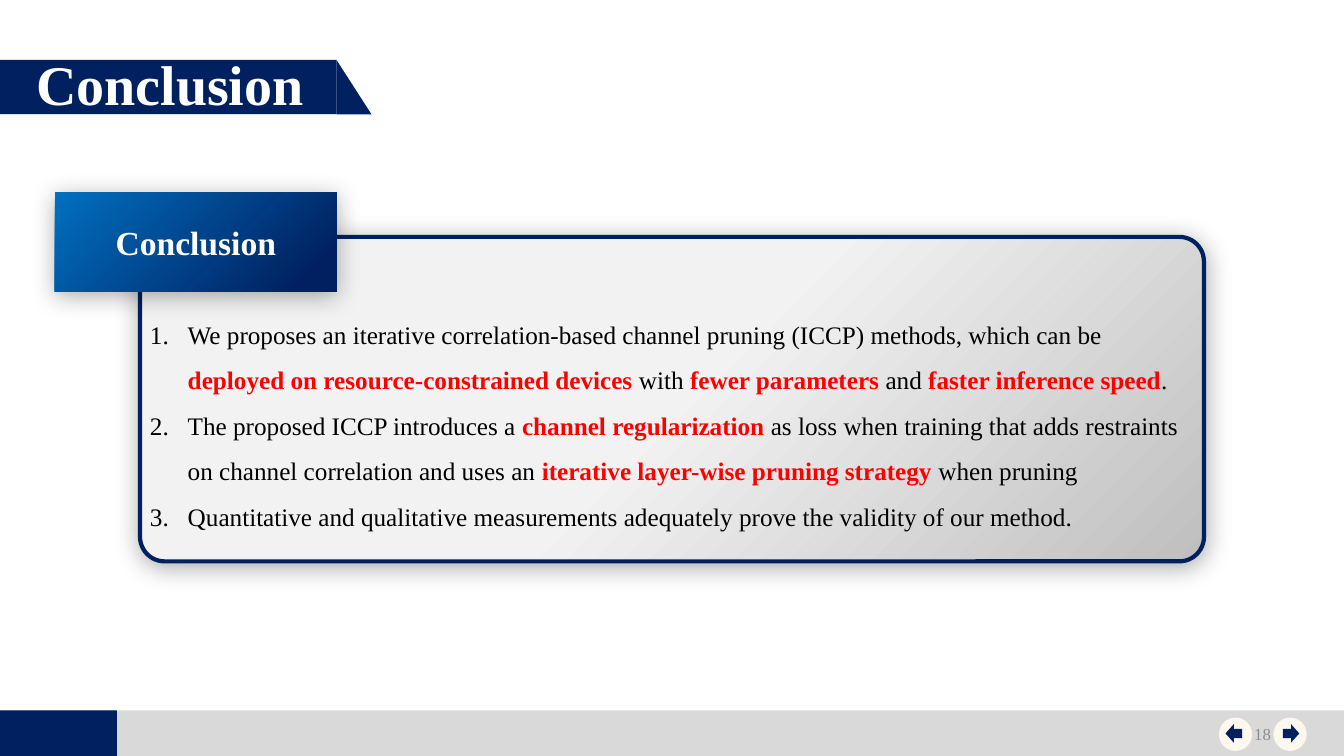
from dataclasses import dataclass

from lxml import etree
from pptx import Presentation
from pptx.dml.color import RGBColor
from pptx.enum import shapes, text
from pptx.oxml import ns
from pptx.util import Pt


@dataclass(frozen=True)
class Theme:
    font: str = "Times New Roman"
    navy: str = "002060"
    blue: str = "0070C0"
    cream: str = "FCF8ED"
    bar: str = "D9D9D9"
    panel_light: str = "F2F2F2"
    panel_dark: str = "BFBFBF"
    number: str = "8C8C8C"
    white: str = "FFFFFF"
    black: str = "000000"
    red: str = "FF0000"
    title_size: int = 40
    label_size: int = 24
    body_size: int = 18
    number_size: int = 12


T = Theme()
SHAPE = shapes.MSO_SHAPE
ALIGN = text.PP_ALIGN
ANCHOR = text.MSO_ANCHOR

# Each point is a list of (text, highlighted) pieces
POINTS = [
    [("We proposes an iterative correlation-based channel pruning (ICCP) "
      "methods, which can be ", False),
     ("deployed on resource-constrained devices", True),
     (" with ", False),
     ("fewer parameters ", True),
     ("and ", False),
     ("faster inference speed", True),
     (".", False)],
    [("The proposed ICCP introduces a ", False),
     ("channel regularization ", True),
     ("as loss when training that adds restraints on channel correlation "
      "and uses an ", False),
     ("iterative layer-wise pruning strategy ", True),
     ("when pruning", False)],
    [("Quantitative and qualitative measurements adequately prove the "
      "validity of our method.", False)],
]


def rgb(color):
    return RGBColor.from_string(color)


def add_shape(s, kind, box, color=None):
    sp = s.shapes.add_shape(kind, *map(Pt, box))
    sp.shadow.inherit = False
    sp.line.fill.background()
    if color:
        sp.fill.solid()
        sp.fill.fore_color.rgb = rgb(color)
    return sp


def set_gradient(sp, stops):
    """Blend two (position, colour) stops from top left to bottom right."""
    sp.fill.gradient()
    sp.fill.gradient_angle = 315
    for stop, (position, color) in zip(sp.fill.gradient_stops, stops):
        stop.position = position
        stop.color.rgb = rgb(color)


def set_shadow(sp):
    effects = sp.element.spPr.find(ns.qn("a:effectLst"))
    shadow = etree.SubElement(
        effects, ns.qn("a:outerShdw"), blurRad=str(Pt(17.8)),
        dist=str(Pt(3)), dir=str(87 * 60000), algn="t", rotWithShape="0")
    color = etree.SubElement(shadow, ns.qn("a:srgbClr"), val=T.black)
    etree.SubElement(color, ns.qn("a:alpha"), val="33000")


def format_run(r, size, color, bold=False):
    r.font.name = T.font
    r.font.size = Pt(size)
    r.font.bold = bold
    r.font.color.rgb = rgb(color)


def set_text(sp, words, size, color, bold=False, align=ALIGN.LEFT,
             anchor=ANCHOR.MIDDLE):
    tf = sp.text_frame
    tf.text = words
    tf.word_wrap = True
    tf.auto_size = text.MSO_AUTO_SIZE.NONE
    tf.vertical_anchor = anchor
    p = tf.paragraphs[0]
    p.alignment = align
    format_run(p.runs[0], size, color, bold)


def add_text_box(s, box):
    sp = s.shapes.add_textbox(*map(Pt, box))
    sp.text_frame.word_wrap = True
    return sp


def add_numbered_list(s, box, points):
    tf = add_text_box(s, box).text_frame
    for i, pieces in enumerate(points):
        p = tf.add_paragraph() if i else tf.paragraphs[0]
        p.line_spacing = 1.5
        pPr = p._p.get_or_add_pPr()
        pPr.set("marL", str(Pt(27)))
        pPr.set("indent", str(-Pt(27)))
        etree.SubElement(pPr, ns.qn("a:buFont"), typeface="+mj-lt")
        etree.SubElement(pPr, ns.qn("a:buAutoNum"), type="arabicPeriod")
        for words, highlighted in pieces:
            r = p.add_run()
            r.text = words
            format_run(r, T.body_size, T.red if highlighted else T.black,
                       highlighted)


def add_nav_button(s, left, arrow, arrow_left):
    add_shape(s, SHAPE.OVAL, (left, 512.6, 23.8, 23.8), T.cream)
    add_shape(s, arrow, (arrow_left, 517.3, 11.8, 13.2), T.navy)


def add_footer(s):
    add_shape(s, SHAPE.RECTANGLE, (0, 507.4, 960, 32.6), T.bar)
    add_shape(s, SHAPE.RECTANGLE, (0, 507.4, 83.6, 32.6), T.navy)
    add_nav_button(s, 909.6, SHAPE.RIGHT_ARROW, 916.3)
    add_nav_button(s, 870.6, SHAPE.LEFT_ARROW, 875.4)
    number = add_text_box(s, (699, 510, 216, 28.8))
    set_text(number, "18", T.number_size, T.number, align=ALIGN.RIGHT)


def add_title_banner(s, words):
    add_shape(s, SHAPE.RECTANGLE, (0, 42.8, 240.4, 38.8), T.navy)
    add_shape(s, SHAPE.RIGHT_TRIANGLE, (240.4, 42.9, 25, 38.8), T.navy)
    title = s.shapes.title
    title.left, title.top, title.width, title.height = map(
        Pt, (18.7, 31.7, 265.7, 55.7))
    set_text(title, words, T.title_size, T.white, True, anchor=ANCHOR.TOP)
    # Bring the title in front of its banner
    title.element.getparent().append(title.element)


def add_panel(s, box):
    sp = add_shape(s, SHAPE.ROUNDED_RECTANGLE, box)
    sp.adjustments[0] = 0.076
    set_gradient(sp, [(0.5, T.panel_light), (1, T.panel_dark)])
    sp.line.color.rgb = rgb(T.navy)
    sp.line.width = Pt(3)
    set_shadow(sp)


def add_label(s, box, words):
    sp = add_shape(s, SHAPE.RECTANGLE, box)
    set_gradient(sp, [(0, T.blue), (0.9, T.navy)])
    set_shadow(sp)
    set_text(sp, words, T.label_size, T.white, True, ALIGN.CENTER)


def main():
    prs = Presentation()
    prs.slide_width, prs.slide_height = Pt(960), Pt(540)
    s = prs.slides.add_slide(prs.slide_layouts.get_by_name("Title Only"))

    # Frame of the slide
    add_footer(s)
    add_title_banner(s, "Conclusion")

    # Conclusion panel
    add_panel(s, (100, 169.2, 760, 231.8))
    add_numbered_list(s, (100, 213.8, 760, 167), POINTS)
    add_label(s, (39.3, 137.3, 201.2, 71), "Conclusion")

    prs.save("out.pptx")


if __name__ == "__main__":
    main()
